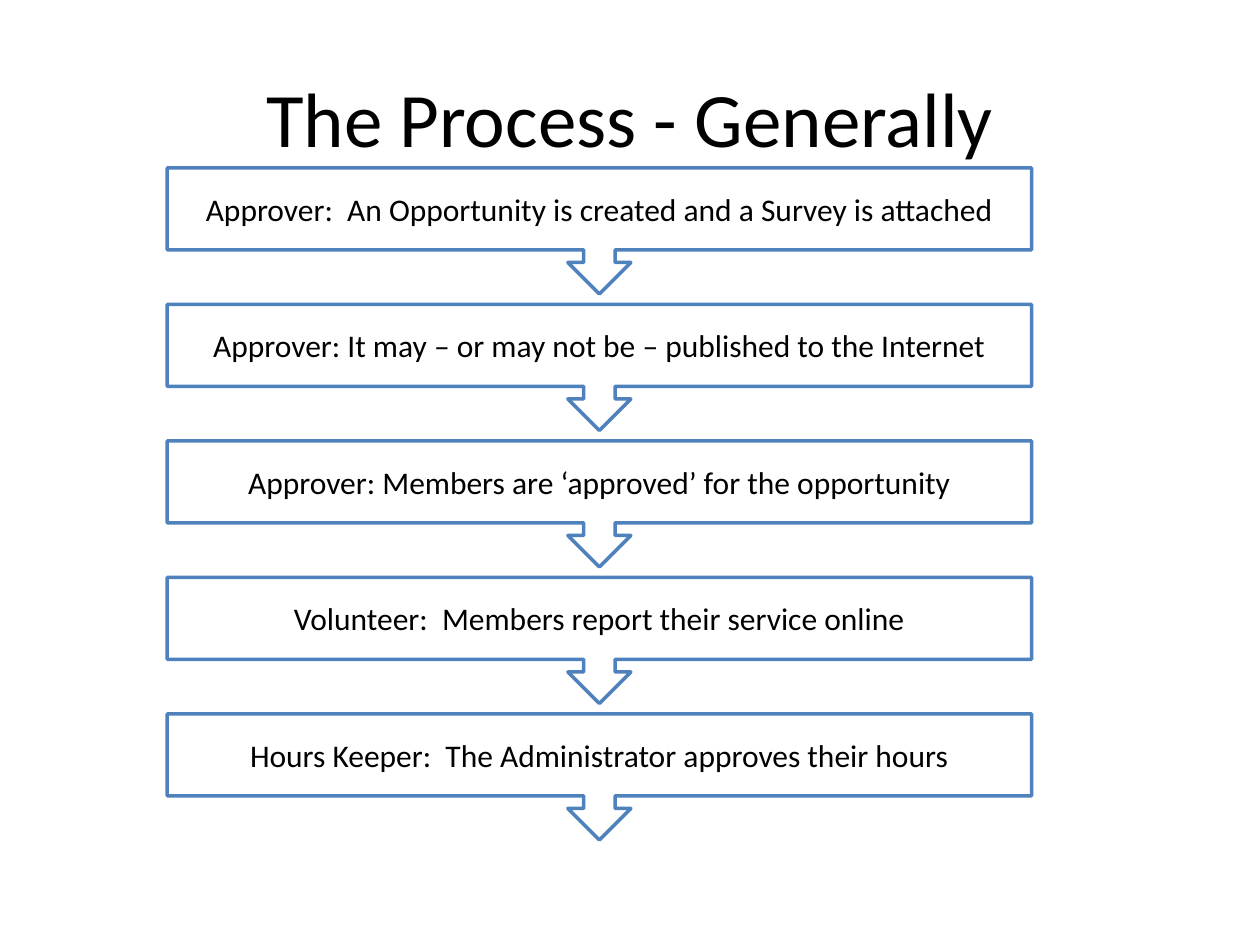
from pptx import Presentation
from pptx import util as u
from pptx.dml.color import RGBColor
from pptx.enum import shapes, text

BLACK = RGBColor(0x00, 0x00, 0x00)
WHITE = RGBColor(0xFF, 0xFF, 0xFF)
BLUE = RGBColor(0x4F, 0x81, 0xBD)

STEPS = [
    "Approver:  An Opportunity is created and a Survey is attached",
    "Approver: It may – or may not be – published to the Internet",
    "Approver: Members are ‘approved’ for the opportunity",
    "Volunteer:  Members report their service online",
    "Hours Keeper:  The Administrator approves their hours",
]
STEP_LEFT, STEP_TOP, STEP_WIDTH, STEP_HEIGHT = 95.5, 96, 494, 72
STEP_PITCH = 78


class ProcessSlide:
    font_name = "Calibri"
    title_size = 44
    step_size = 18
    line_width = 2

    def __init__(self, prs):
        self.s = prs.slides.add_slide(prs.slide_layouts[5])

    def label(self, sp, words, size):
        tf = sp.text_frame
        tf.word_wrap = True
        tf.vertical_anchor = text.MSO_ANCHOR.MIDDLE
        p = tf.paragraphs[0]
        p.alignment = text.PP_ALIGN.CENTER
        r = p.add_run()
        r.text = words
        r.font.color.rgb = BLACK
        for name, value in {"name": self.font_name, "size": u.Pt(size)}.items():
            setattr(r.font, name, value)

    def title(self, words, left, top, width, height):
        sp = self.s.shapes.title
        box = {"left": left, "top": top, "width": width, "height": height}
        for name, value in box.items():
            setattr(sp, name, u.Pt(value))
        self.label(sp, words, self.title_size)

    def step(self, words, left, top, width, height):
        sp = self.s.shapes.add_shape(
            shapes.MSO_SHAPE.DOWN_ARROW_CALLOUT,
            u.Pt(left), u.Pt(top), u.Pt(width), u.Pt(height))
        sp.shadow.inherit = False
        sp.fill.solid()
        sp.fill.fore_color.rgb = WHITE
        sp.line.color.rgb = BLUE
        sp.line.width = u.Pt(self.line_width)
        self.label(sp, words, self.step_size)


def main():
    prs = Presentation()
    prs.slide_width, prs.slide_height = u.Pt(720), u.Pt(540)
    slide = ProcessSlide(prs)
    slide.title("The Process - Generally", 36, 21.6, 648, 90)
    for i, words in enumerate(STEPS):
        slide.step(words, STEP_LEFT, STEP_TOP + i * STEP_PITCH, STEP_WIDTH, STEP_HEIGHT)
    prs.save("out.pptx")


if __name__ == "__main__":
    main()
